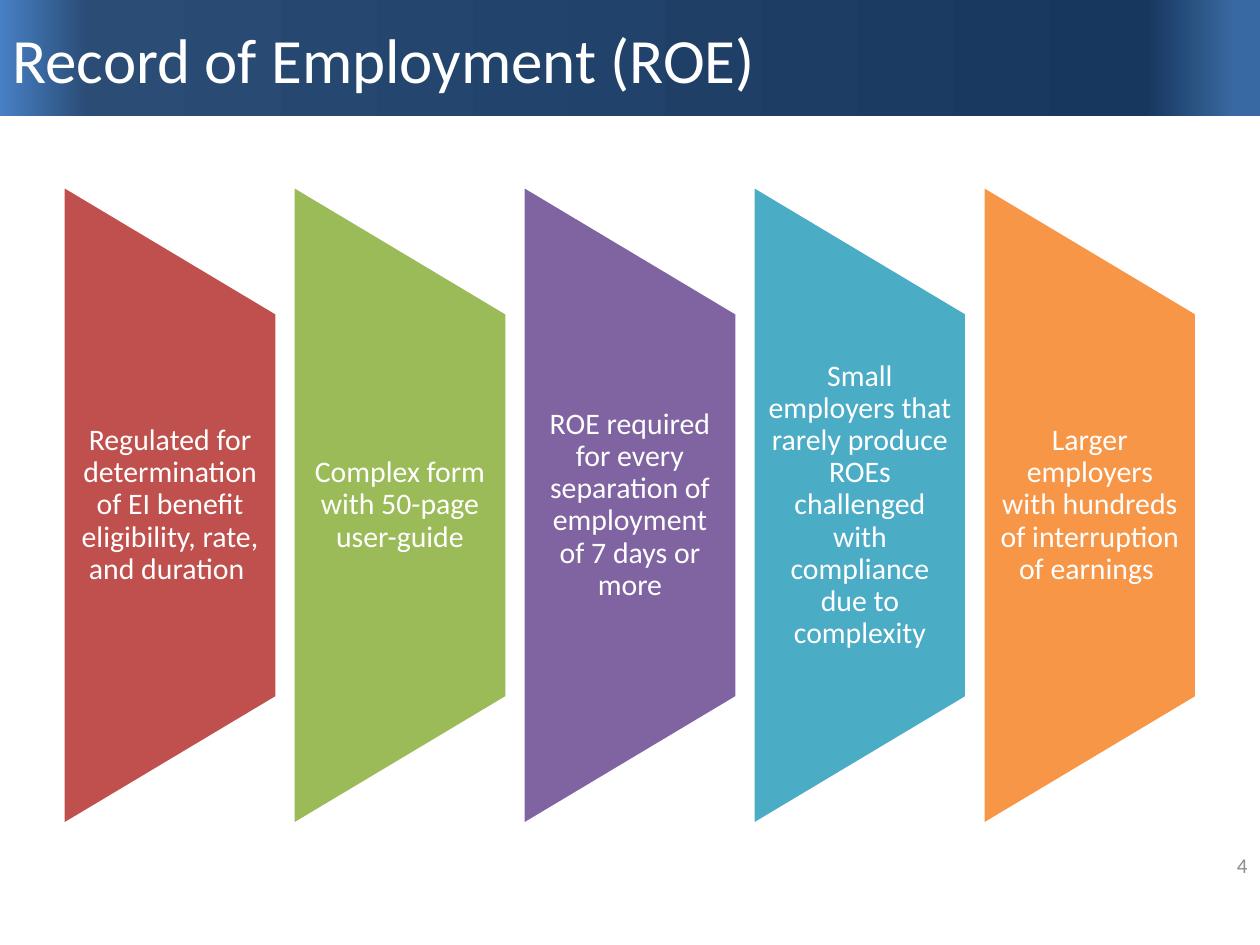
from dataclasses import dataclass

from lxml import etree
from pptx import Presentation
from pptx.dml.color import RGBColor
from pptx.enum.shapes import MSO_SHAPE
from pptx.enum.text import MSO_ANCHOR, PP_ALIGN
from pptx.oxml.ns import qn
from pptx.util import Inches, Pt

RECTANGLE = MSO_SHAPE.RECTANGLE
TRAPEZOID = MSO_SHAPE.FLOWCHART_MANUAL_OPERATION
MIDDLE = MSO_ANCHOR.MIDDLE
LEFT, CENTER, RIGHT = PP_ALIGN.LEFT, PP_ALIGN.CENTER, PP_ALIGN.RIGHT


@dataclass(frozen=True)
class Theme:
    font: str = "Calibri"
    white: str = "FFFFFF"
    number_gray: str = "8C8C8C"
    band_stops: tuple = ((2, "3969A2"), (9, "17375E"), (93, "2A4C75"), (100, "4780C5"))
    title_size: int = 36
    panel_size: int = 17
    number_size: int = 12


@dataclass(frozen=True)
class Panel:
    text: str
    color: str


THEME = Theme()
PANELS = (
    Panel("Regulated for determination of EI benefit eligibility, rate, and duration ", "C0504D"),
    Panel("Complex form with 50-page user-guide", "9BBB59"),
    Panel("ROE required for every separation of employment of 7 days or more", "8064A2"),
    Panel("Small employers that rarely produce ROEs challenged with compliance due to complexity",
          "4BACC6"),
    Panel("Larger employers with hundreds of interruption of earnings ", "F79646"),
)

# Layout in inches
SLIDE_W, SLIDE_H = 10, 7.5
BAND_H = 0.92
PANEL_W, PANEL_H = 1.7, 5.08
PANEL_GAP = 0.125
PANEL_MIDDLE_Y = 4.01
PANEL_TEXT_H = 3.05
PANEL_INSET = 0.12


def box(left: float, top: float, width: float, height: float) -> tuple:
    return tuple(Inches(v) for v in (left, top, width, height))


def write(shape, text: str, size: int, color: str, align, **frame_format) -> None:
    """Put one formatted paragraph into a shape, middle-anchored."""
    frame = shape.text_frame
    for name, value in {"word_wrap": True, "vertical_anchor": MIDDLE, **frame_format}.items():
        setattr(frame, name, value)
    paragraph = frame.paragraphs[0]
    paragraph.text = text
    paragraph.alignment = align
    font = paragraph.runs[0].font
    for name, value in {"name": THEME.font, "size": Pt(size)}.items():
        setattr(font, name, value)
    font.color.rgb = RGBColor.from_string(color)


def add_band(slide) -> None:
    """Gradient band behind the title."""
    band = slide.shapes.add_shape(RECTANGLE, *box(0, 0, SLIDE_W, BAND_H))
    band.shadow.inherit = False
    band.line.fill.background()
    band.fill.gradient()
    band.fill.gradient_angle = 180
    stops = band.fill._fill._gradFill.find(qn("a:gsLst"))
    for stop in list(stops):
        stops.remove(stop)
    for percent, color in THEME.band_stops:
        stop = etree.SubElement(stops, qn("a:gs"), pos=str(percent * 1000))
        etree.SubElement(stop, qn("a:srgbClr"), val=color)
    slide.shapes._spTree.insert(2, band._element)


def add_panel(group, panel: Panel, center_x: float) -> None:
    """Trapezoid turned on its side, with upright text over it."""
    trapezoid = group.shapes.add_shape(TRAPEZOID, *box(
        center_x - PANEL_H / 2, PANEL_MIDDLE_Y - PANEL_W / 2, PANEL_H, PANEL_W))
    trapezoid.rotation = 270
    trapezoid.shadow.inherit = False
    trapezoid.fill.solid()
    trapezoid.fill.fore_color.rgb = RGBColor.from_string(panel.color)
    trapezoid.line.color.rgb = RGBColor.from_string(THEME.white)
    trapezoid.line.width = Pt(2)

    label = group.shapes.add_textbox(*box(
        center_x - PANEL_W / 2, PANEL_MIDDLE_Y - PANEL_TEXT_H / 2, PANEL_W, PANEL_TEXT_H))
    write(label, panel.text, THEME.panel_size, THEME.white, CENTER,
          margin_left=Inches(PANEL_INSET), margin_right=Inches(PANEL_INSET),
          margin_top=0, margin_bottom=0)
    label.text_frame.paragraphs[0].line_spacing = 0.9


def main() -> None:
    deck = Presentation()
    deck.slide_width, deck.slide_height = Inches(SLIDE_W), Inches(SLIDE_H)
    slide = deck.slides.add_slide(deck.slide_layouts[5])

    # Title on its band
    add_band(slide)
    title = slide.shapes.title
    title.left, title.top, title.width, title.height = box(0, 0, SLIDE_W, BAND_H)
    write(title, "Record of Employment (ROE)", THEME.title_size, THEME.white, LEFT)

    # Row of panels, centred on the slide
    panel_row = slide.shapes.add_group_shape()
    pitch = PANEL_W + PANEL_GAP
    first_x = SLIDE_W / 2 - pitch * (len(PANELS) - 1) / 2
    for index, panel in enumerate(PANELS):
        add_panel(panel_row, panel, first_x + index * pitch)

    # Slide number
    number = slide.shapes.add_textbox(*box(7.67, 6.67, 2.33, 0.4))
    write(number, "4", THEME.number_size, THEME.number_gray, RIGHT)

    deck.save("out.pptx")


if __name__ == "__main__":
    main()
